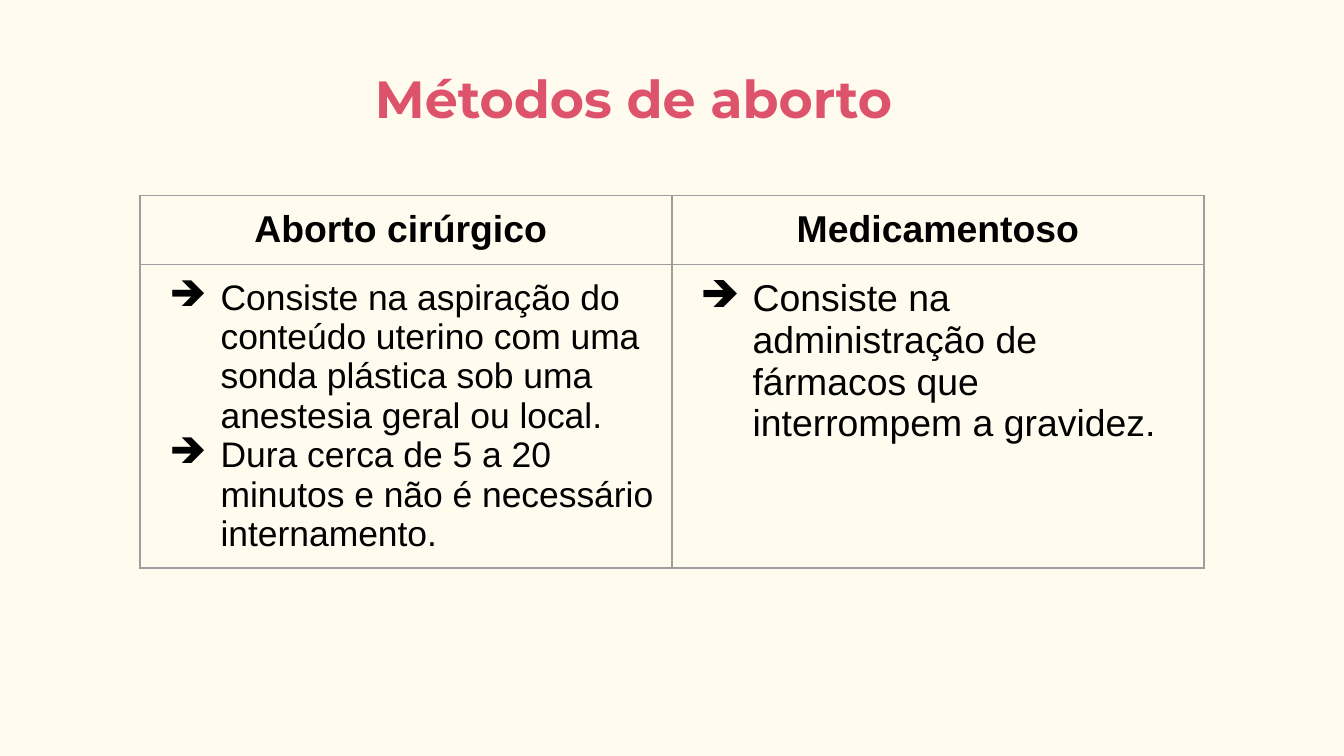
from dataclasses import dataclass

from lxml.etree import SubElement as Sub
from pptx import Presentation
from pptx.dml.color import RGBColor as RGB
from pptx.enum.text import MSO_ANCHOR as Anchor
from pptx.enum.text import MSO_AUTO_SIZE as Fit
from pptx.enum.text import PP_ALIGN as Align
from pptx.oxml.ns import qn
from pptx.util import Pt


@dataclass(frozen=True)
class Theme:
    """Colours, fonts and type sizes of the slide."""
    paper: str = "FFFCEF"
    rose: str = "DD536B"
    ink: str = "000000"
    rule: str = "9E9E9E"
    head: str = "Montserrat"
    body: str = "Arial"
    title: int = 28
    large: int = 20
    small: int = 19


THEME = Theme()
PAD = 7.2
METHODS = [
    ("Aborto cirúrgico ", THEME.small, 27.4, [
        "Consiste na aspiração do conteúdo uterino com uma sonda plástica "
        "sob uma anestesia geral ou local.",
        "Dura cerca de 5 a 20 minutos e não é necessário internamento.",
    ]),
    ("Medicamentoso", THEME.large, 28, [
        "Consiste na administração de fármacos que interrompem a gravidez.",
    ]),
]


def style(para, face, size, color, bold=False):
    """Set the font of a whole paragraph."""
    font = para.font
    font.name, font.size, font.bold = face, Pt(size), bold
    font.color.rgb = RGB.from_string(color)


def inset(box):
    """Give a text frame or cell equal margins."""
    box.margin_left = box.margin_right = Pt(PAD)
    box.margin_top = box.margin_bottom = Pt(PAD)


def add_title(slide, text):
    """Fill and place the title placeholder."""
    shape = slide.shapes.title
    shape.left, shape.top = Pt(193.7), Pt(28.1)
    shape.width, shape.height = Pt(321.8), Pt(45.4)
    frame = shape.text_frame
    frame.text = text
    frame.auto_size, frame.word_wrap = Fit.NONE, True
    frame.vertical_anchor = Anchor.TOP
    inset(frame)
    para = frame.paragraphs[0]
    para.alignment = Align.LEFT
    style(para, THEME.head, THEME.title, THEME.rose, True)


def frame_cell(cell):
    """Rule all four sides of a cell and clear its fill."""
    props = cell._tc.get_or_add_tcPr()
    for side in ("lnL", "lnR", "lnT", "lnB"):
        line = Sub(props, qn(f"a:{side}"), w=str(Pt(0.75)))
        fill = Sub(line, qn("a:solidFill"))
        Sub(fill, qn("a:srgbClr"), val=THEME.rule)
    cell.fill.background()
    cell.vertical_anchor = Anchor.TOP
    inset(cell)


def add_arrow(para, hang):
    """Hang a paragraph from an arrow bullet."""
    props = para._p.get_or_add_pPr()
    props.set("marL", str(Pt(36)))
    props.set("indent", str(-Pt(hang)))
    color = Sub(props, qn("a:buClr"))
    Sub(color, qn("a:srgbClr"), val=THEME.ink)
    Sub(props, qn("a:buChar"), char="➔")


def fill_head(cell, text):
    """Write a centred column heading."""
    frame_cell(cell)
    cell.text = text
    para = cell.text_frame.paragraphs[0]
    para.alignment = Align.CENTER
    style(para, THEME.body, THEME.large, THEME.ink, True)


def fill_list(cell, items, size, hang):
    """Write the bulleted points of a column."""
    frame_cell(cell)
    cell.text = "\n".join(items)
    for para in cell.text_frame.paragraphs:
        add_arrow(para, hang)
        style(para, THEME.body, size, THEME.ink)


def add_grid(slide, methods):
    """Build the table with one column per method."""
    wide, rows = 285, (37, 162.5)
    shape = slide.shapes.add_table(
        len(rows), len(methods), Pt(75), Pt(104.8),
        Pt(wide * len(methods)), Pt(sum(rows)))
    table = shape.table
    table.first_row = table.horz_banding = False
    for row, high in zip(table.rows, rows):
        row.height = Pt(high)
    for col, (name, size, hang, items) in enumerate(methods):
        table.columns[col].width = Pt(wide)
        fill_head(table.cell(0, col), name)
        fill_list(table.cell(1, col), items, size, hang)


def main():
    """Build and save the slide."""
    deck = Presentation()
    deck.slide_width, deck.slide_height = Pt(720), Pt(405)
    slide = deck.slides.add_slide(deck.slide_layouts[5])
    back = slide.background.fill
    back.solid()
    back.fore_color.rgb = RGB.from_string(THEME.paper)
    add_title(slide, "Métodos de aborto")
    add_grid(slide, METHODS)
    deck.save("out.pptx")


if __name__ == "__main__":
    main()
